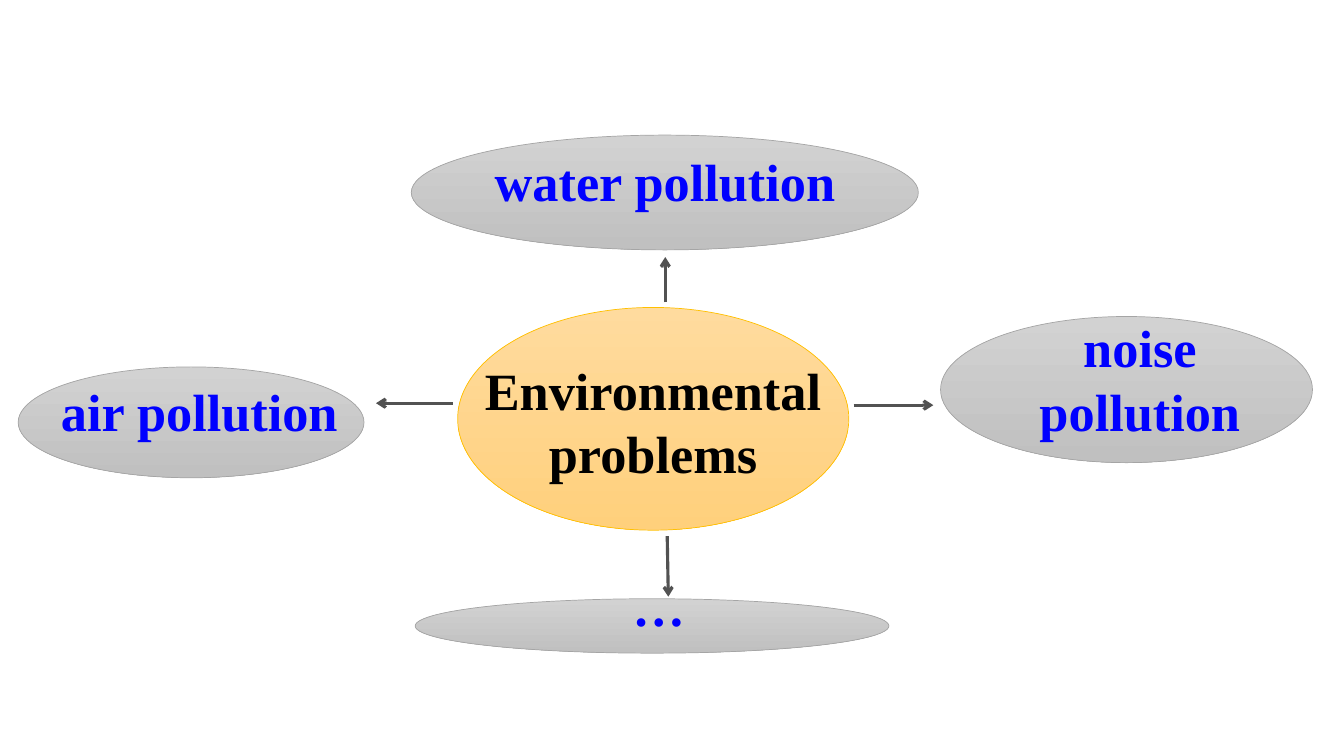
import pptx
import pptx.util
import pptx.dml.color
import pptx.enum.shapes
import pptx.enum.text
import pptx.oxml
import pptx.oxml.ns

Pt = pptx.util.Pt
RGBColor = pptx.dml.color.RGBColor

BLACK = RGBColor(0x00, 0x00, 0x00)
BLUE = RGBColor(0x00, 0x00, 0xFF)
ARROW_GRAY = RGBColor(0x52, 0x52, 0x52)
ORANGE = (RGBColor(0xFF, 0xDB, 0x9E), RGBColor(0xFF, 0xD0, 0x7C), RGBColor(0xFF, 0xC0, 0x00))
GRAY = (RGBColor(0xD2, 0xD2, 0xD2), RGBColor(0xC0, 0xC0, 0xC0), RGBColor(0xA5, 0xA5, 0xA5))

deck = pptx.Presentation()
deck.slide_width = Pt(960)
deck.slide_height = Pt(540)
page = deck.slides.add_slide(deck.slide_layouts[6])

topics = [
    ("Environmental problems", BLACK, ORANGE,
     (326.9, 219.6, 279.4, 159.1), (326.9, 252, 279.4, 97.9)),
    ("noise pollution", BLUE, GRAY,
     (671.8, 226.1, 265.7, 104.4), (723.6, 221.8, 181.4, 97.9)),
    ("water pollution", BLUE, GRAY,
     (293.8, 96.5, 362.2, 82), (288, 103, 374.4, 52.6)),
    ("air pollution", BLUE, GRAY,
     (13, 262.1, 247, 79.2), (22.3, 267.1, 240.5, 52.6)),
    ("…", BLUE, GRAY,
     (296.6, 427.7, 338.4, 38.9), (326.9, 406.8, 287.3, 52.6)),
]

for wording, text_color, (top_color, bottom_color, line_color), oval_place, label_place in topics:
    topic = page.shapes.add_group_shape()

    oval = topic.shapes.add_shape(
        pptx.enum.shapes.MSO_SHAPE.OVAL, *[Pt(length) for length in oval_place])
    oval.shadow.inherit = False
    oval.fill.gradient()
    oval.fill.gradient_angle = 270
    for stop, color in zip(oval.fill.gradient_stops, (top_color, bottom_color)):
        stop.color.rgb = color
    oval.line.color.rgb = line_color
    oval.line.width = Pt(0.5)

    label = topic.shapes.add_textbox(*[Pt(length) for length in label_place])
    frame = label.text_frame
    frame.word_wrap = True
    frame.auto_size = pptx.enum.text.MSO_AUTO_SIZE.SHAPE_TO_FIT_TEXT
    frame.text = wording
    para = frame.paragraphs[0]
    para.alignment = pptx.enum.text.PP_ALIGN.CENTER
    para.line_spacing = Pt(45)
    span = para.runs[0]
    span.font.name = "Times New Roman"
    span.font.size = Pt(37.4)
    span.font.bold = True
    span.font.color.rgb = text_color

arrows = [
    (609.8, 289.4, 666.7, 289.4),
    (475.2, 216, 475.2, 183.6),
    (323.3, 288, 268.6, 288),
    (476.6, 383, 477.4, 426.2),
]

for ends in arrows:
    arrow = page.shapes.add_connector(
        pptx.enum.shapes.MSO_CONNECTOR.STRAIGHT, *[Pt(length) for length in ends])
    arrow.line.color.rgb = ARROW_GRAY
    arrow.line.width = Pt(2.25)
    head = pptx.oxml.parse_xml(
        '<a:tailEnd %s type="arrow"/>' % pptx.oxml.ns.nsdecls("a"))
    arrow.line._get_or_add_ln().append(head)
    arrow._element.spPr.append(
        pptx.oxml.parse_xml("<a:effectLst %s/>" % pptx.oxml.ns.nsdecls("a")))

deck.save("out.pptx")
